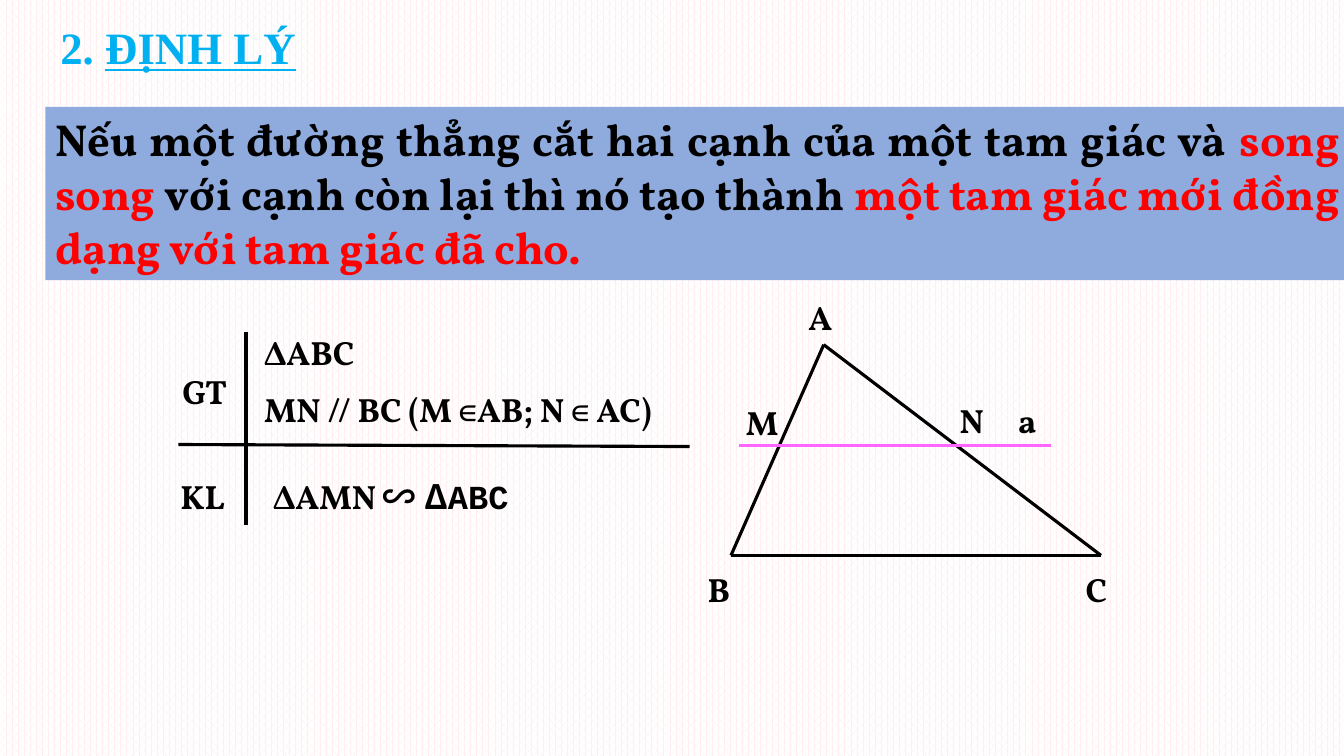
from dataclasses import dataclass

from lxml.etree import SubElement
from pptx import Presentation
from pptx.dml.color import RGBColor
from pptx.enum.dml import MSO_PATTERN
from pptx.enum.shapes import MSO_CONNECTOR, MSO_SHAPE
from pptx.enum.text import MSO_ANCHOR, MSO_AUTO_SIZE, PP_ALIGN
from pptx.oxml.ns import qn
from pptx.slide import Slide
from pptx.text.text import TextFrame
from pptx.util import Pt

SCALE = 9144
COLORS = {
    "ink": "000000",
    "key": "FF0000",
    "head": "00B0F0",
    "band": "8FAADC",
    "cut": "FF66FF",
    "dot": "FFEFF0",
    "page": "FFFFFF",
}
BODY = {"name": "Vollkorn", "size": Pt(24), "bold": True}
RULE = BODY | {"size": Pt(32)}
TITLE = RULE | {"name": "Times New Roman"}
FRAME = {
    "word_wrap": True,
    "auto_size": MSO_AUTO_SIZE.SHAPE_TO_FIT_TEXT,
    "vertical_anchor": MSO_ANCHOR.TOP,
}


@dataclass(frozen=True)
class Part:
    text: str
    style: dict
    color: str = "ink"


@dataclass(frozen=True)
class Label:
    box: tuple[int, int, int, int]
    rows: list[list[Part]]
    wrap: bool = True


@dataclass(frozen=True)
class Line:
    start: tuple[int, int]
    end: tuple[int, int]
    color: str = "ink"


def px(count: int) -> int:
    return count * SCALE


def tint(name: str) -> RGBColor:
    return RGBColor.from_string(COLORS[name])


def apply(target: object, values: dict) -> None:
    for name, value in values.items():
        setattr(target, name, value)


def write(frame: TextFrame, rows: list[list[Part]], align: PP_ALIGN) -> None:
    for index, row in enumerate(rows):
        para = frame.add_paragraph() if index else frame.paragraphs[0]
        para.alignment = align
        if index:
            para.space_before = Pt(12)
        for part in row:
            run = para.add_run()
            run.text = part.text
            apply(run.font, part.style)
            run.font.color.rgb = tint(part.color)


def draw_label(slide: Slide, label: Label) -> None:
    frame = slide.shapes.add_textbox(*map(px, label.box)).text_frame
    apply(frame, FRAME | {"word_wrap": label.wrap})
    write(frame, label.rows, PP_ALIGN.LEFT)


def draw_line(slide: Slide, line: Line) -> None:
    link = slide.shapes.add_connector(
        MSO_CONNECTOR.STRAIGHT, *map(px, line.start + line.end)
    )
    link.line.color.rgb = tint(line.color)
    link.line.width = Pt(2.25)
    SubElement(link._element.spPr, qn("a:effectLst"))


def draw_band(slide: Slide, box: tuple[int, int, int, int], row: list[Part]) -> None:
    band = slide.shapes.add_shape(MSO_SHAPE.RECTANGLE, *map(px, box))
    band.shadow.inherit = False
    band.fill.solid()
    band.fill.fore_color.rgb = tint("band")
    band.line.fill.background()
    apply(band.text_frame, FRAME)
    write(band.text_frame, [row], PP_ALIGN.JUSTIFY)


def plain(text: str) -> list[Part]:
    return [Part(text, BODY)]


THEOREM = [
    Part("Nếu một đường thẳng cắt hai cạnh của một tam giác và ", RULE),
    Part("song song ", RULE, "key"),
    Part("với cạnh còn lại thì nó tạo thành ", RULE),
    Part("một tam giác mới đồng dạng với tam giác đã cho.", RULE, "key"),
]
HEADING = [
    Part("2. ", TITLE, "head"),
    Part("ĐỊNH LÝ", TITLE | {"underline": True}, "head"),
]
RESULT = [
    Part("ΔAMN ", BODY),
    Part("∽ Δ", BODY | {"name": "Noto Sans CJK JP"}),
    Part("ABC", BODY | {"name": "Courier New"}),
]
GIVEN = [plain("ΔABC"), plain("MN // BC (M ∈AB; N ∈ AC)")]
POINTS = {
    "A": (792, 290),
    "M": (730, 394),
    "N": (942, 392),
    "a": (1000, 392),
    "B": (692, 559),
    "C": (1067, 559),
}
LABELS = [
    Label((50, 15, 256, 64), [HEADING], wrap=False),
    Label((171, 363, 117, 50), [plain("GT")]),
    Label((252, 324, 472, 111), GIVEN),
    Label((169, 467, 117, 50), [plain("KL")]),
    Label((261, 467, 297, 50), [RESULT]),
] + [Label((*spot, 75, 50), [plain(name)]) for name, spot in POINTS.items()]

TOP, LEFT, RIGHT = (817, 342), (725, 551), (1092, 551)
LINES = [
    Line((244, 329), (244, 521)),
    Line((177, 441), (684, 443)),
    Line(TOP, LEFT),
    Line(LEFT, RIGHT),
    Line(TOP, RIGHT),
    Line((733, 442), (1042, 442), "cut"),
]


def main() -> None:
    deck = Presentation()
    apply(deck, {"slide_width": px(1333), "slide_height": px(750)})
    slide = deck.slides.add_slide(deck.slide_layouts[6])
    fill = slide.background.fill
    fill.patterned()
    fill.pattern = MSO_PATTERN.PERCENT_60
    fill.fore_color.rgb = tint("dot")
    fill.back_color.rgb = tint("page")
    draw_band(slide, (45, 106, 1294, 172), THEOREM)
    for line in LINES:
        draw_line(slide, line)
    for label in LABELS:
        draw_label(slide, label)
    deck.save("out.pptx")


if __name__ == "__main__":
    main()
